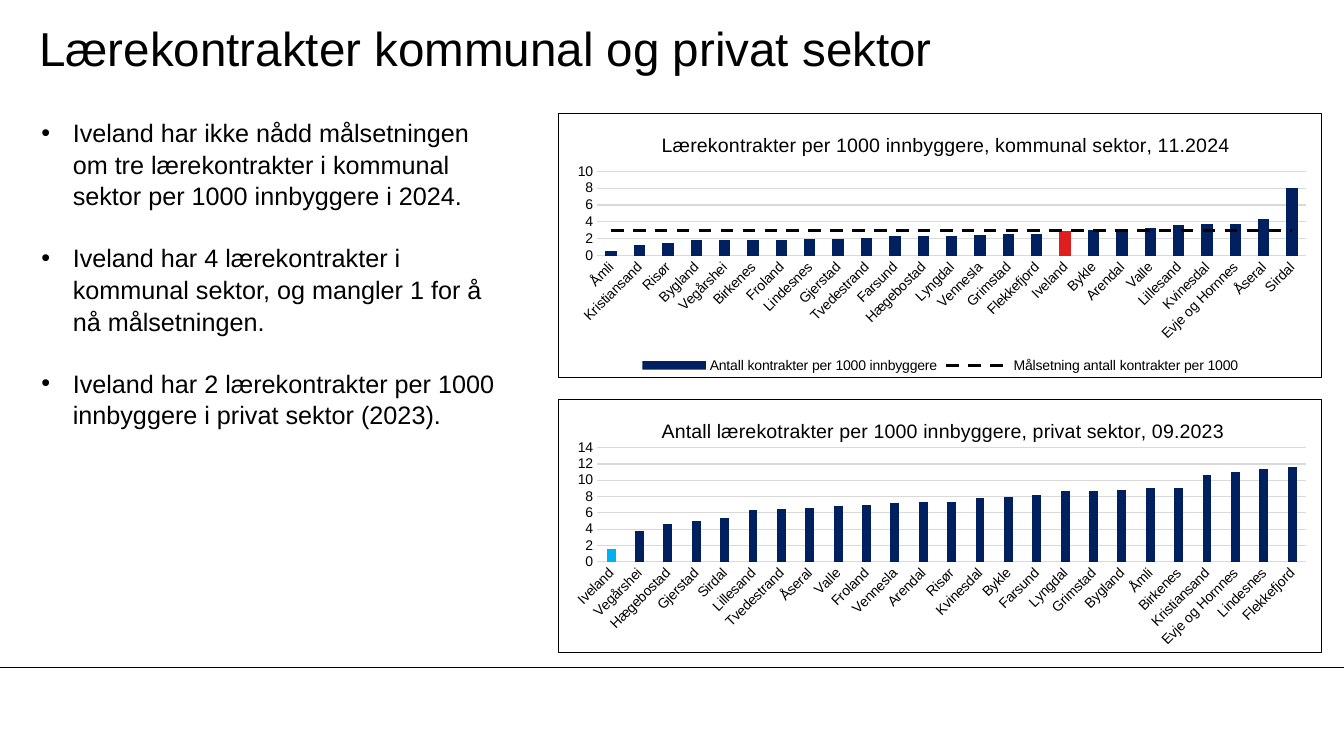
from dataclasses import dataclass

import pptx
import pptx.chart.data
import pptx.dml.color
import pptx.enum.chart
import pptx.enum.dml
import pptx.enum.shapes
import pptx.enum.text
import pptx.oxml
import pptx.oxml.ns
import pptx.util
from pptx.util import Cm

qn = pptx.oxml.ns.qn
NAMESPACES = pptx.oxml.ns.nsdecls("c", "a")


@dataclass(frozen=True)
class Theme:
    font: str = "Arial"
    title_size: int = 34
    body_size: int = 18
    chart_title_size: int = 14
    chart_size: int = 10
    thin: float = 0.75
    ink: str = "000000"
    grid: str = "D9D9D9"
    bar: str = "002060"
    public_highlight: str = "DF1F1D"
    private_highlight: str = "00B0F0"


def rgb(value):
    return pptx.dml.color.RGBColor.from_string(value)


def set_layout(element, index, x, y, width=None, height=None):
    """Give a chart title or plot area a fixed place, in fractions of the chart."""
    for old in element.findall(qn("c:layout")):
        element.remove(old)
    target = '<c:layoutTarget val="inner"/>' if width else ""
    size = f'<c:w val="{width}"/><c:h val="{height}"/>' if width else ""
    element.insert(index, pptx.oxml.parse_xml(
        f'<c:layout {NAMESPACES}><c:manualLayout>{target}<c:xMode val="edge"/><c:yMode val="edge"/>'
        f'<c:x val="{x}"/><c:y val="{y}"/>{size}</c:manualLayout></c:layout>'))


class SlideBuilder:
    def __init__(self, slide, theme):
        self.slide = slide
        self.theme = theme

    def style_font(self, font, size):
        font.name = self.theme.font
        font.size = pptx.util.Pt(size)
        font.bold = False
        font.color.rgb = rgb(self.theme.ink)

    def style_line(self, line, color, width):
        line.color.rgb = rgb(color)
        line.width = pptx.util.Pt(width)

    def place(self, shape, left, top, width, height):
        shape.left, shape.top, shape.width, shape.height = map(Cm, (left, top, width, height))

    def title(self, text, *box):
        shape = self.slide.shapes.title
        self.place(shape, *box)
        frame = shape.text_frame
        frame.text = text
        frame.auto_size = pptx.enum.text.MSO_AUTO_SIZE.NONE
        frame.vertical_anchor = pptx.enum.text.MSO_ANCHOR.MIDDLE
        frame.margin_left = frame.margin_right = frame.margin_top = frame.margin_bottom = 0
        paragraph = frame.paragraphs[0]
        paragraph.alignment = pptx.enum.text.PP_ALIGN.LEFT
        self.style_font(paragraph.runs[0].font, self.theme.title_size)

    def bullets(self, items, *box):
        shape = self.slide.placeholders[1]
        self.place(shape, *box)
        frame = shape.text_frame
        frame.text = "\n".join(items)
        frame.auto_size = pptx.enum.text.MSO_AUTO_SIZE.NONE
        for number, paragraph in enumerate(frame.paragraphs):
            properties = paragraph._p.get_or_add_pPr()
            properties.set("marL", str(Cm(0.79)))
            properties.set("indent", str(Cm(-0.79)))
            properties.append(pptx.oxml.parse_xml(f'<a:buChar {NAMESPACES} char="•"/>'))
            paragraph.line_spacing = 1.05
            paragraph.space_before = pptx.util.Pt(21.5 if number else 0)
            paragraph.space_after = pptx.util.Pt(0)
            self.style_font(paragraph.runs[0].font, self.theme.body_size)

    def rule(self, left, right, y):
        connector = self.slide.shapes.add_connector(
            pptx.enum.shapes.MSO_CONNECTOR.STRAIGHT, Cm(left), Cm(y), Cm(right), Cm(y))
        self.style_line(connector.line, self.theme.ink, self.theme.thin)
        connector._element.spPr.append(pptx.oxml.parse_xml(f"<a:effectLst {NAMESPACES}/>"))

    def column_chart(self, title, title_at, plot_at, categories, series, highlight,
                     gap, overlap, *box):
        theme = self.theme
        data = pptx.chart.data.CategoryChartData(number_format="General")
        data.categories = categories
        for name, values in series:
            data.add_series(name, values)
        chart = self.slide.shapes.add_chart(
            pptx.enum.chart.XL_CHART_TYPE.COLUMN_CLUSTERED, *map(Cm, box), data).chart
        self.style_font(chart.font, theme.chart_size)
        chart.has_legend = False

        # Title and frame
        chart.has_title = True
        frame = chart.chart_title.text_frame
        frame.text = title
        self.style_font(frame.paragraphs[0].runs[0].font, theme.chart_title_size)
        set_layout(chart.chart_title._element, 1, *title_at)
        chart_element = chart.element.find(qn("c:chart"))
        set_layout(chart_element.find(qn("c:plotArea")), 0, *plot_at)
        chart_element.addnext(pptx.oxml.parse_xml(
            f'<c:spPr {NAMESPACES}><a:noFill/><a:ln w="{pptx.util.Pt(theme.thin)}"><a:solidFill>'
            f'<a:srgbClr val="{theme.ink}"/></a:solidFill></a:ln></c:spPr>'))

        # Columns
        plot = chart.plots[0]
        plot.vary_by_categories = False
        plot.gap_width = gap
        plot.overlap = overlap
        columns = plot.series[0]
        columns.invert_if_negative = False
        for part, color in ((columns, theme.bar),
                            (columns.points[categories.index("Iveland")], highlight)):
            part.format.fill.solid()
            part.format.fill.fore_color.rgb = rgb(color)

        # Axes
        for axis in (chart.category_axis, chart.value_axis):
            axis.major_tick_mark = axis.minor_tick_mark = pptx.enum.chart.XL_TICK_MARK.NONE
            self.style_font(axis.tick_labels.font, theme.chart_size)
        self.style_line(chart.category_axis.format.line, theme.grid, theme.thin)
        chart.category_axis._element.find(qn("c:txPr")).find(qn("a:bodyPr")).set("rot", "-2700000")
        chart.value_axis.format.line.fill.background()
        chart.value_axis.minimum_scale = 0
        chart.value_axis.tick_labels.number_format = "0"
        chart.value_axis.tick_labels.number_format_is_linked = False
        self.style_line(chart.value_axis.major_gridlines.format.line, theme.grid, theme.thin)
        return chart

    def target_line(self, chart):
        """Turn the second series into a dashed line on the same axes."""
        bars = chart.element.find(".//" + qn("c:barChart"))
        target = bars.findall(qn("c:ser"))[1]
        for unused in target.findall(qn("c:invertIfNegative")):
            target.remove(unused)
        axes = "".join(f'<c:axId val="{axis.get("val")}"/>' for axis in bars.findall(qn("c:axId")))
        lines = pptx.oxml.parse_xml(
            f'<c:lineChart {NAMESPACES}><c:grouping val="standard"/><c:varyColors val="0"/>'
            f'<c:marker val="1"/>{axes}</c:lineChart>')
        lines.insert(2, target)
        bars.addnext(lines)
        series = chart.plots[1].series[0]
        series.smooth = False
        series.marker.style = pptx.enum.chart.XL_MARKER_STYLE.NONE
        self.style_line(series.format.line, self.theme.ink, 2.25)
        series.format.line.dash_style = pptx.enum.dml.MSO_LINE.DASH

    def legend(self, chart):
        chart.has_legend = True
        chart.legend.position = pptx.enum.chart.XL_LEGEND_POSITION.BOTTOM
        chart.legend.include_in_layout = False
        self.style_font(chart.legend.font, self.theme.chart_size)


BULLETS = [
    "Iveland har ikke nådd målsetningen om tre lærekontrakter i kommunal sektor per 1000 innbyggere i 2024.",
    "Iveland har 4 lærekontrakter i kommunal sektor, og mangler 1 for å nå målsetningen.",
    "Iveland har 2 lærekontrakter per 1000 innbyggere i privat sektor (2023).",
]
PUBLIC = {
    "Åmli": 0.6, "Kristiansand": 1.3, "Risør": 1.5, "Bygland": 1.8, "Vegårshei": 1.8,
    "Birkenes": 1.8, "Froland": 1.9, "Lindesnes": 2, "Gjerstad": 2, "Tvedestrand": 2.1,
    "Farsund": 2.3, "Hægebostad": 2.3, "Lyngdal": 2.3, "Vennesla": 2.5, "Grimstad": 2.6,
    "Flekkefjord": 2.6, "Iveland": 2.9, "Bykle": 3, "Arendal": 3, "Valle": 3.3,
    "Lillesand": 3.6, "Kvinesdal": 3.7, "Evje og Hornnes": 3.8, "Åseral": 4.3, "Sirdal": 8,
}
PRIVATE = {
    "Iveland": 1.5, "Vegårshei": 3.7, "Hægebostad": 4.6, "Gjerstad": 5, "Sirdal": 5.4,
    "Lillesand": 6.3, "Tvedestrand": 6.5, "Åseral": 6.6, "Valle": 6.8, "Froland": 7,
    "Vennesla": 7.2, "Arendal": 7.3, "Risør": 7.3, "Kvinesdal": 7.8, "Bykle": 8,
    "Farsund": 8.2, "Lyngdal": 8.7, "Grimstad": 8.7, "Bygland": 8.8, "Åmli": 9,
    "Birkenes": 9.1, "Kristiansand": 10.6, "Evje og Hornnes": 11, "Lindesnes": 11.4,
    "Flekkefjord": 11.6,
}


def main():
    presentation = pptx.Presentation()
    presentation.slide_width, presentation.slide_height = Cm(33.87), Cm(19.05)
    theme = Theme()
    builder = SlideBuilder(presentation.slides.add_slide(presentation.slide_layouts[1]), theme)

    # Text and footer rule
    builder.rule(0, 33.87, 16.81)
    builder.title("Lærekontrakter kommunal og privat sektor", 0.99, 0.25, 28.19, 1.9)
    builder.bullets(BULLETS, 0.79, 2.79, 11.94, 9.5)

    # Charts
    builder.column_chart(
        "Antall lærekotrakter per 1000 innbyggere, privat sektor, 09.2023",
        (0.13, 0.06), (0.05, 0.19, 0.93, 0.45), list(PRIVATE),
        [("Series 1", PRIVATE.values())], theme.private_highlight, 219, -27, 14.07, 10.06, 19.25, 6.4)
    public_chart = builder.column_chart(
        "Lærekontrakter per 1000 innbyggere, kommunal sektor, 11.2024",
        (0.13, 0.06), (0.05, 0.22, 0.93, 0.32), list(PUBLIC),
        [("Antall kontrakter per 1000 innbyggere", PUBLIC.values()),
         ("Målsetning antall kontrakter per 1000", [3] * len(PUBLIC))],
        theme.public_highlight, 150, 0, 14.07, 2.84, 19.25, 6.68)
    public_chart.value_axis.maximum_scale = 10
    builder.target_line(public_chart)
    builder.legend(public_chart)

    presentation.save("out.pptx")


if __name__ == "__main__":
    main()
